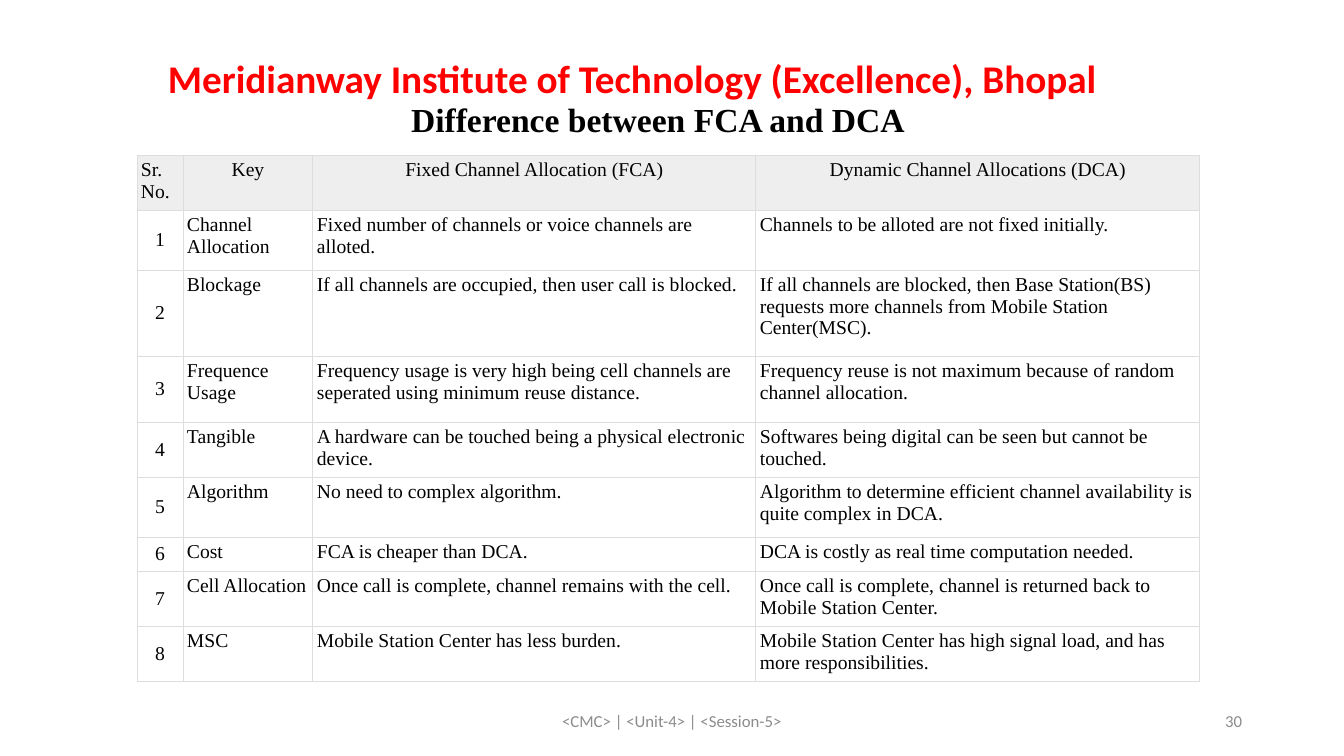
"""Build the slide that compares fixed and dynamic channel allocation."""
from lxml.etree import SubElement
from pptx import Presentation
from pptx.dml.color import RGBColor
from pptx.enum.text import MSO_ANCHOR, PP_ALIGN
from pptx.oxml.ns import qn
from pptx.util import Pt

SLIDE_WIDTH, SLIDE_HEIGHT = 1344, 756
PX = 12192000 / SLIDE_WIDTH
RED = RGBColor(0xFF, 0x00, 0x00)
BLACK = RGBColor(0x00, 0x00, 0x00)
GREY = RGBColor(0x8C, 0x8C, 0x8C)
HEADER_FILL = RGBColor(0xEE, 0xEE, 0xEE)
BORDER = RGBColor(0xDD, 0xDD, 0xDD)
SANS, SERIF = "Calibri", "Times New Roman"


def px(length):
    """Turn a length in px into EMU."""
    return round(length * PX)


def write(frame, text, size=14, font=SERIF, color=BLACK, bold=False,
          align=PP_ALIGN.LEFT):
    """Write one formatted paragraph into a text frame."""
    frame.word_wrap = True
    paragraph = frame.paragraphs[0]
    paragraph.alignment = align
    run = paragraph.add_run()
    run.text = text
    run.font.size = Pt(size)
    run.font.name = font
    run.font.bold = bold
    run.font.color.rgb = color


presentation = Presentation()
presentation.slide_width = px(SLIDE_WIDTH)
presentation.slide_height = px(SLIDE_HEIGHT)
slide = presentation.slides.add_slide(presentation.slide_layouts[6])

footer = {"size": 12, "font": SANS, "color": GREY}
texts = [
    ("<CMC> | <Unit-4> | <Session-5>", (445, 701, 454, 40), 10, MSO_ANCHOR.MIDDLE,
     {**footer, "align": PP_ALIGN.CENTER}),
    ("30", (950, 701, 302, 40), 10, MSO_ANCHOR.MIDDLE,
     {**footer, "align": PP_ALIGN.RIGHT}),
    ("Difference between FCA and DCA", (401, 94, 672, 82), 10, MSO_ANCHOR.TOP,
     {"size": 24, "bold": True}),
    ("Meridianway Institute of Technology (Excellence), Bhopal",
     (57, 49, 1207, 57), 111, MSO_ANCHOR.TOP,
     {"size": 28, "font": SANS, "color": RED, "bold": True}),
]
for text, box, indent, anchor, text_format in texts:
    frame = slide.shapes.add_textbox(*map(px, box)).text_frame
    frame.margin_left = px(indent)
    frame.vertical_anchor = anchor
    write(frame, text, **text_format)

rows = [
    ("Sr. No.", "Key", "Fixed Channel Allocation (FCA)",
     "Dynamic Channel Allocations (DCA)"),
    ("1", "Channel Allocation",
     "Fixed number of channels or voice channels are alloted.",
     "Channels to be alloted are not fixed initially."),
    ("2", "Blockage",
     "If all channels are occupied, then user call is blocked.",
     "If all channels are blocked, then Base Station(BS) requests more channels "
     "from Mobile Station Center(MSC)."),
    ("3", "Frequence Usage",
     "Frequency usage is very high being cell channels are seperated using "
     "minimum reuse distance.",
     "Frequency reuse is not maximum because of random channel allocation."),
    ("4", "Tangible",
     "A hardware can be touched being a physical electronic device.",
     "Softwares being digital can be seen but cannot be touched."),
    ("5", "Algorithm", "No need to complex algorithm.",
     "Algorithm to determine efficient channel availability is quite complex in DCA."),
    ("6", "Cost", "FCA is cheaper than DCA.",
     "DCA is costly as real time computation needed."),
    ("7", "Cell Allocation",
     "Once call is complete, channel remains with the cell.",
     "Once call is complete, channel is returned back to Mobile Station Center."),
    ("8", "MSC", "Mobile Station Center has less burden.",
     "Mobile Station Center has high signal load, and has more responsibilities."),
]
column_widths = [46, 130, 443, 444]
row_heights = [55, 60, 86, 66, 54, 60, 34, 55, 55]

table = slide.shapes.add_table(
    len(rows), len(column_widths), px(137), px(155),
    px(sum(column_widths)), px(sum(row_heights))).table
table.first_row = False
table.horz_banding = False
for column, width in zip(table.columns, column_widths):
    column.width = px(width)
for row, height in zip(table.rows, row_heights):
    row.height = px(height)

for row_index, row_texts in enumerate(rows):
    for column_index, text in enumerate(row_texts):
        cell = table.cell(row_index, column_index)
        cell.margin_left = cell.margin_right = px(4)
        cell.margin_top = cell.margin_bottom = px(4)
        is_header = row_index == 0
        is_number = column_index == 0 and not is_header
        cell.vertical_anchor = MSO_ANCHOR.MIDDLE if is_number else MSO_ANCHOR.TOP
        centred = is_header != (column_index == 0)
        write(cell.text_frame, text,
              align=PP_ALIGN.CENTER if centred else PP_ALIGN.LEFT)

        properties = cell._tc.get_or_add_tcPr()
        for side in ("lnL", "lnR", "lnT", "lnB"):
            line = SubElement(properties, qn(f"a:{side}"), w=str(Pt(0.75)))
            line_fill = SubElement(line, qn("a:solidFill"))
            SubElement(line_fill, qn("a:srgbClr"), val=str(BORDER))
        if is_header:
            cell.fill.solid()
            cell.fill.fore_color.rgb = HEADER_FILL
        else:
            cell.fill.background()

presentation.save("out.pptx")
